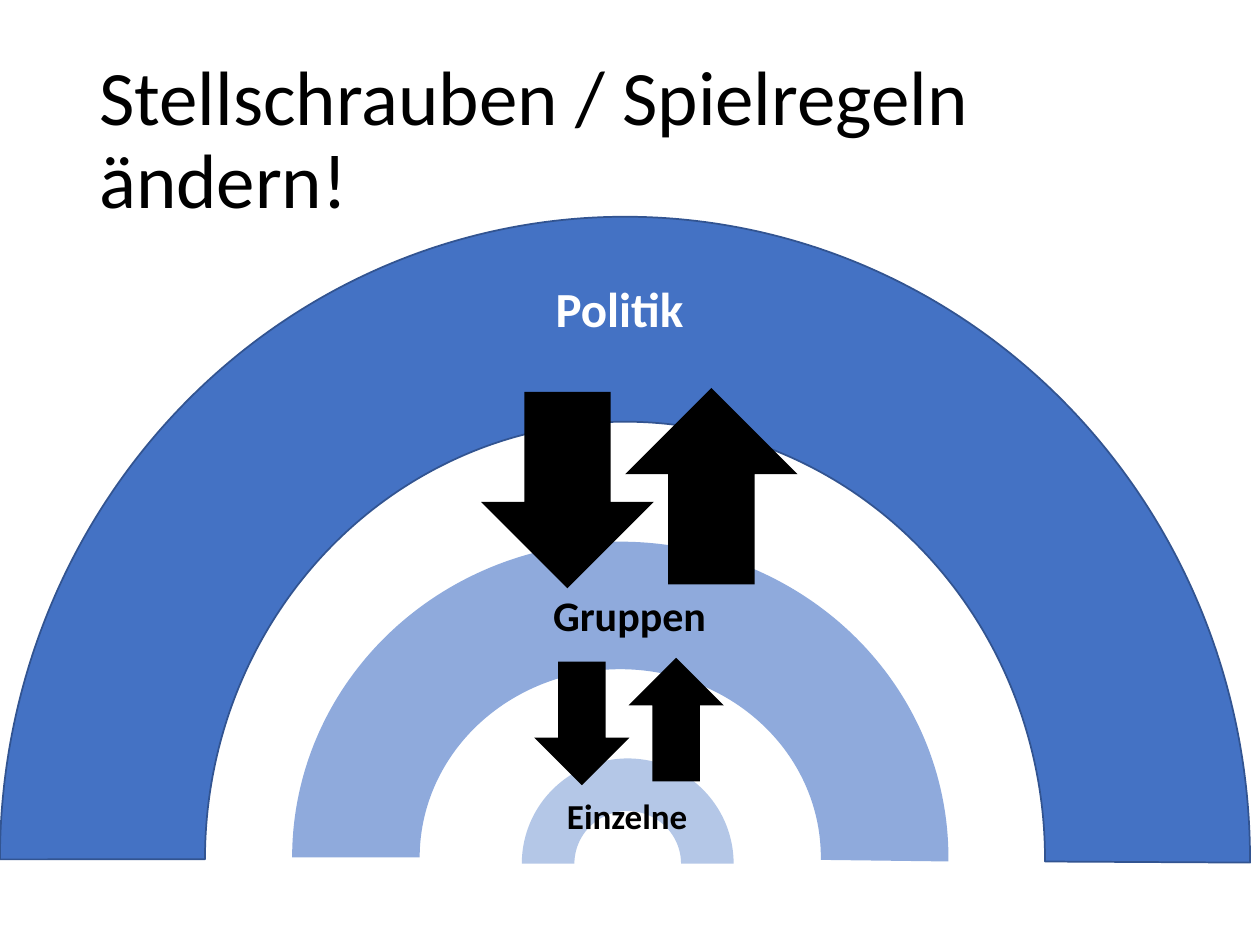
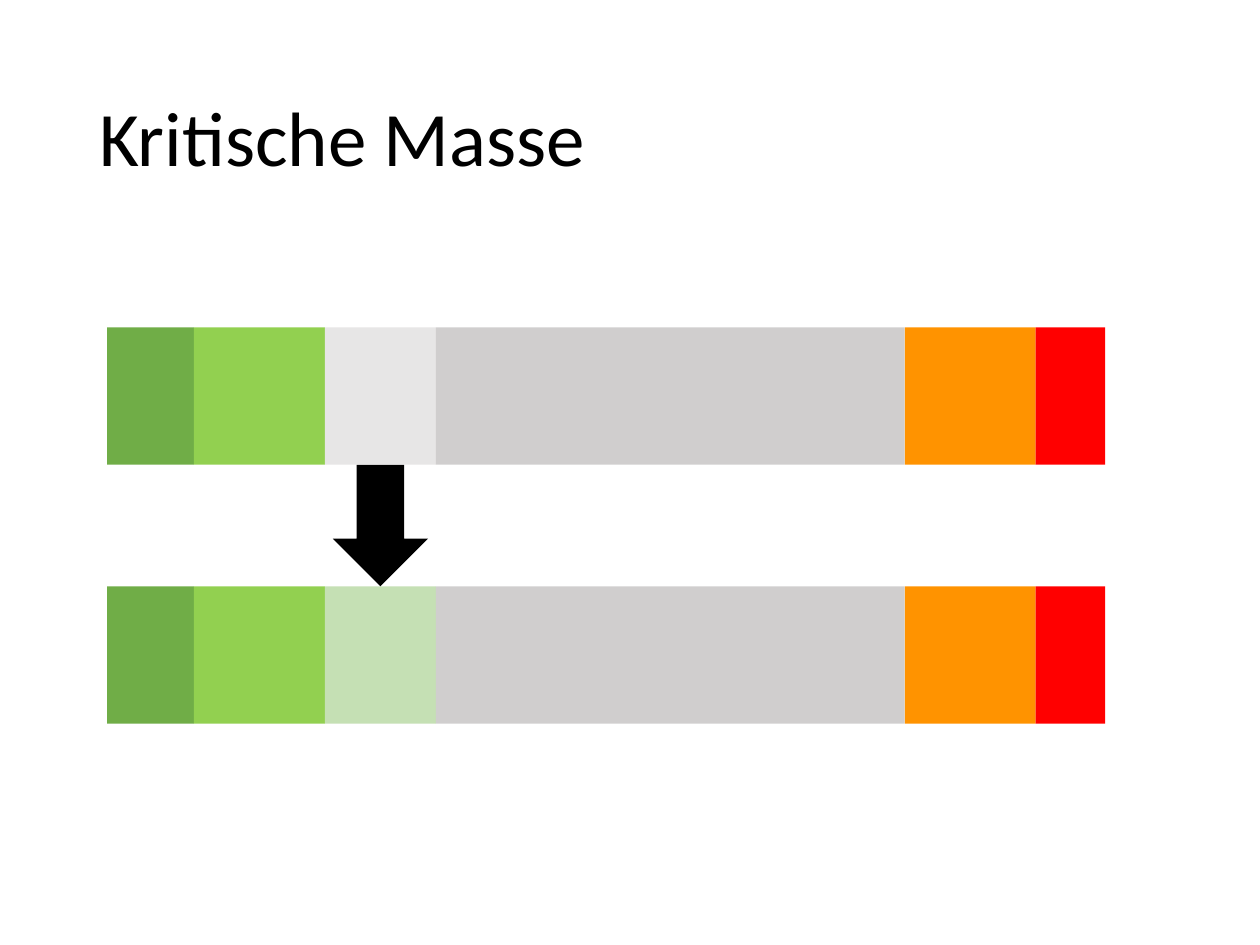
from dataclasses import dataclass

from pptx import Presentation
from pptx import util as u
from pptx.dml.color import RGBColor
from pptx.enum import shapes, text

BLACK, WHITE = "000000", "FFFFFF"
FONT = "Calibri"
KIND = shapes.MSO_SHAPE


@dataclass
class Box:
    left: float
    top: float
    width: float
    height: float

    def cm(self) -> list:
        return [u.Cm(n) for n in (self.left, self.top, self.width, self.height)]


@dataclass
class Arc:
    box: Box
    fill: str
    adjust: tuple = ()
    line: str = ""


@dataclass
class Arrow:
    box: Box
    turn: int = 0


@dataclass
class Label:
    words: str
    box: Box
    size: int
    color: str = BLACK


@dataclass
class Part:
    width: float
    fill: str


ARCS = [
    Arc(Box(10.52, 15.29, 4.27, 4.24), "B4C7E7"),
    Arc(Box(5.89, 10.92, 13.23, 12.73), "8FAADC", (108, 0.426, 0.202)),
    Arc(Box(0, 4.37, 25.2, 25.91), "4472C4", (108, 0.177, 0.164), "325491"),
]
ARROWS = [
    Arrow(Box(9.7, 7.9, 3.48, 3.96)),
    Arrow(Box(10.77, 13.34, 1.92, 2.49)),
    Arrow(Box(12.6, 7.82, 3.48, 3.96), 180),
    Arrow(Box(12.67, 13.26, 1.92, 2.49), 180),
]
LABELS = [
    Label("Einzelne", Box(11.18, 15.9, 2.97, 1.12), 20),
    Label("Gruppen", Box(10.9, 11.76, 3.63, 1.3), 24),
    Label("Politik", Box(10.95, 5.49, 3.12, 1.45), 28, WHITE),
]

SWING = 2  # index of the part that changes between the two bars
PARTS = [
    Part(1.75, "70AD47"),
    Part(2.64, "92D050"),
    Part(2.24, "E7E6E6"),
    Part(9.45, "D0CECE"),
    Part(2.64, "FF9300"),
    Part(1.4, "FF0000"),
]
WON = "C5E0B4"
BAR_LEFT, BAR_HIGH = 2.16, 2.77
TOP_ONE, TOP_TWO = 6.6, 11.82


def rgb(code: str) -> RGBColor:
    return RGBColor.from_string(code)


def style(item, **values) -> None:
    for name, value in values.items():
        setattr(item, name, value)


def draw(slide, kind, box: Box, fill: str, line: str = ""):
    shape = slide.shapes.add_shape(kind, *box.cm())
    shape.shadow.inherit = False
    shape.fill.solid()
    shape.fill.fore_color.rgb = rgb(fill)
    if line:
        shape.line.color.rgb = rgb(line)
        shape.line.width = u.Pt(1)
    else:
        shape.line.fill.background()
    return shape


def draw_arc(slide, arc: Arc) -> None:
    shape = draw(slide, KIND.BLOCK_ARC, arc.box, arc.fill, arc.line)
    for index, value in enumerate(arc.adjust):
        shape.adjustments[index] = value


def draw_arrow(slide, arrow: Arrow) -> None:
    draw(slide, KIND.DOWN_ARROW, arrow.box, BLACK).rotation = arrow.turn


def write(slide, label: Label, bold: bool, **frame):
    """Add a text box, set its frame values and return its paragraph."""
    area = slide.shapes.add_textbox(*label.box.cm()).text_frame
    style(area, **frame)
    para = area.paragraphs[0]
    run = para.add_run()
    run.text = label.words
    style(run.font, name=FONT, size=u.Pt(label.size), bold=bold)
    run.font.color.rgb = rgb(label.color)
    return para


def draw_label(slide, label: Label) -> None:
    write(slide, label, True, word_wrap=False,
          auto_size=text.MSO_AUTO_SIZE.SHAPE_TO_FIT_TEXT)


def add_slide(deck, title: str, width: float):
    slide = deck.slides.add_slide(deck.slide_layouts[6])
    label = Label(title, Box(1.75, 1.02, width, 3.68), 44)
    para = write(slide, label, False, word_wrap=True,
                 vertical_anchor=text.MSO_ANCHOR.MIDDLE)
    para.line_spacing = 0.9
    return slide


def draw_bar(slide, top: float, swing: str) -> None:
    left = BAR_LEFT
    for index, part in enumerate(PARTS):
        fill = swing if index == SWING else part.fill
        draw(slide, KIND.RECTANGLE, Box(left, top, part.width, BAR_HIGH), fill)
        left += part.width


def add_levels(deck) -> None:
    slide = add_slide(deck, "Stellschrauben / Spielregeln ändern!", 23.16)
    for arc in ARCS:
        draw_arc(slide, arc)
    for arrow in ARROWS[:2]:
        draw_arrow(slide, arrow)
    for label in LABELS:
        draw_label(slide, label)
    for arrow in ARROWS[2:]:
        draw_arrow(slide, arrow)


def add_mass(deck) -> None:
    slide = add_slide(deck, "Kritische Masse", 21.89)
    draw_bar(slide, TOP_ONE, PARTS[SWING].fill)
    draw_bar(slide, TOP_TWO, WON)
    wide = 1.92
    left = BAR_LEFT + sum(part.width for part in PARTS[:SWING])
    left += (PARTS[SWING].width - wide) / 2
    base = TOP_ONE + BAR_HIGH
    draw_arrow(slide, Arrow(Box(left, base, wide, TOP_TWO - base)))


def main() -> None:
    deck = Presentation()
    style(deck, slide_width=u.Cm(25.4), slide_height=u.Cm(19.05))
    add_levels(deck)
    add_mass(deck)
    deck.save("out.pptx")


if __name__ == "__main__":
    main()
